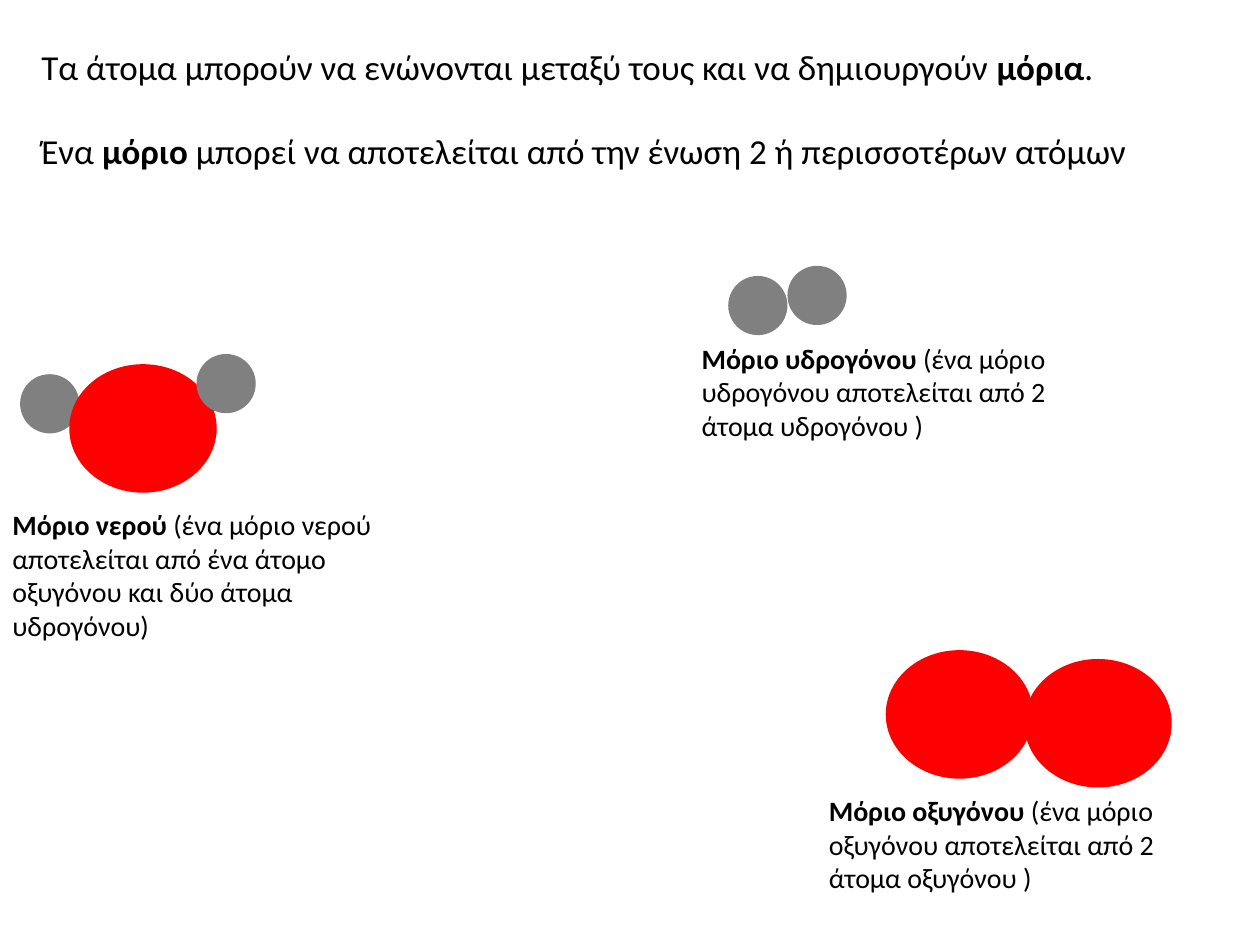
from dataclasses import dataclass

import pptx
import pptx.dml.color
import pptx.enum.shapes
import pptx.enum.text
import pptx.util
from pptx.util import Inches

COLORS = {"hydrogen": "808080", "oxygen": "FF0000", "text": "000000"}
ATOM_SIZES = {"hydrogen": (0.47, 0.47), "oxygen": (1.17, 1.02)}
FONT = "Calibri"


@dataclass
class Atom:
    element: str
    left: float
    top: float


@dataclass
class Run:
    text: str
    bold: bool = False


@dataclass
class Molecule:
    atoms: list[Atom]
    name: str
    description: str
    caption_left: float
    caption_top: float
    caption_height: float = 0.91


INTRO = [
    [
        Run("Τα άτομα μπορούν να ενώνονται μεταξύ τους και να δημιουργούν "),
        Run("μόρια", True),
        Run("."),
    ],
    [
        Run("Ένα "),
        Run("μόριο", True),
        Run(" μπορεί να αποτελείται από την ένωση 2 ή περισσοτέρων ατόμων"),
    ],
]

MOLECULES = [
    Molecule(
        [Atom("hydrogen", 0.16, 2.97), Atom("oxygen", 0.55, 2.89), Atom("hydrogen", 1.56, 2.81)],
        "Μόριο νερού ",
        "(ένα μόριο νερού αποτελείται από ένα άτομο οξυγόνου και δύο άτομα υδρογόνου)",
        0, 3.98, 1.18,
    ),
    Molecule(
        [Atom("oxygen", 7.03, 5.16), Atom("oxygen", 8.13, 5.23)],
        "Μόριο οξυγόνου ",
        "(ένα μόριο οξυγόνου αποτελείται από 2 άτομα οξυγόνου )",
        6.48, 6.25,
    ),
    Molecule(
        [Atom("hydrogen", 5.78, 2.19), Atom("hydrogen", 6.25, 2.11)],
        "Μόριο υδρογόνου ",
        "(ένα μόριο υδρογόνου αποτελείται από 2 άτομα υδρογόνου )",
        5.47, 2.66,
    ),
]


def rgb(name: str) -> pptx.dml.color.RGBColor:
    return pptx.dml.color.RGBColor.from_string(COLORS[name])


def add_text(s, left: float, top: float, width: float, height: float,
             paragraphs: list[list[Run]], size: int, gap: float = 0) -> None:
    """Add a text box; gap is the space in points between paragraphs."""
    box = s.shapes.add_textbox(Inches(left), Inches(top), Inches(width), Inches(height))
    tf = box.text_frame
    tf.word_wrap = True
    tf.auto_size = pptx.enum.text.MSO_AUTO_SIZE.SHAPE_TO_FIT_TEXT
    for i, runs in enumerate(paragraphs):
        p = tf.add_paragraph() if i else tf.paragraphs[0]
        if i:
            p.space_before = pptx.util.Pt(gap)
        for run in runs:
            r = p.add_run()
            r.text = run.text
            r.font.name = FONT
            r.font.size = pptx.util.Pt(size)
            r.font.bold = run.bold
            r.font.color.rgb = rgb("text")


def add_atom(s, atom: Atom) -> None:
    width, height = ATOM_SIZES[atom.element]
    sp = s.shapes.add_shape(pptx.enum.shapes.MSO_SHAPE.OVAL, Inches(atom.left),
                            Inches(atom.top), Inches(width), Inches(height))
    sp.shadow.inherit = False
    sp.fill.solid()
    sp.fill.fore_color.rgb = rgb(atom.element)
    sp.line.fill.background()


def add_molecule(s, molecule: Molecule) -> None:
    for atom in molecule.atoms:
        add_atom(s, atom)
    caption = [Run(molecule.name, True), Run(molecule.description)]
    add_text(s, molecule.caption_left, molecule.caption_top, 3.12,
             molecule.caption_height, [caption], 16)


def main() -> None:
    prs = pptx.Presentation()
    prs.slide_width, prs.slide_height = Inches(10), Inches(7.5)
    s = prs.slides.add_slide(prs.slide_layouts[6])
    add_text(s, 0.23, 0.31, 9.61, 1.45, INTRO, 20, gap=24)
    for molecule in MOLECULES:
        add_molecule(s, molecule)
    prs.save("out.pptx")


if __name__ == "__main__":
    main()
